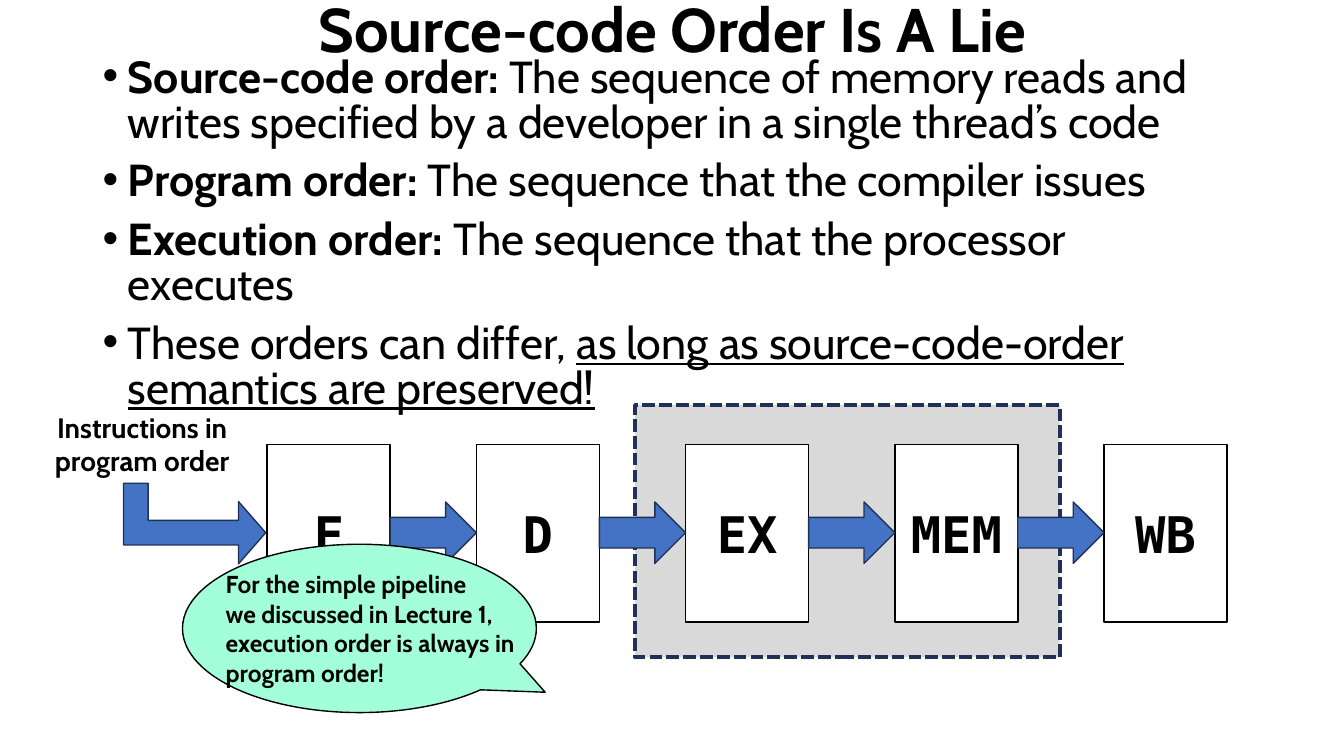
from lxml.etree import SubElement
from pptx import Presentation
from pptx.dml.color import RGBColor
from pptx.enum.dml import MSO_LINE
from pptx.enum.shapes import MSO_SHAPE
from pptx.enum.text import MSO_ANCHOR, PP_ALIGN
from pptx.oxml.ns import qn
from pptx.util import Inches, Pt


def color(hex_value):
    """Turn a hex string into a colour."""
    return RGBColor.from_string(hex_value)


def apply(target, values):
    """Set each named attribute on the target."""
    for name, value in values.items():
        setattr(target, name, value)


class SlideBuilder:
    """Hold the style and the current slide."""

    BODY_FONT = "Cabin"
    CODE_FONT = "DejaVu Sans Mono"
    INK = "000000"
    NAVY = "1E3256"
    ARROW_BLUE = "4472C4"

    def __init__(self, slide):
        """Keep the slide to draw on."""
        self.slide = slide

    def fill_frame(self, frame, paragraphs, size, font=BODY_FONT, bullet=False,
                   anchor=MSO_ANCHOR.TOP, **layout):
        """Fill a frame with paragraphs of (text, run format) pairs."""
        apply(frame, {"word_wrap": True, "vertical_anchor": anchor})
        for index, runs in enumerate(paragraphs):
            paragraph = frame.add_paragraph() if index else frame.paragraphs[0]
            if bullet:
                self.bullet(paragraph)
            apply(paragraph, layout)
            if index == 0:
                paragraph.space_before = Pt(0)
            for text, run_format in runs:
                run = paragraph.add_run()
                run.text = text
                apply(run.font, {"name": font, "size": Pt(size), "bold": True} | run_format)
                run.font.color.rgb = color(self.INK)

    def bullet(self, paragraph):
        """Give a paragraph a hanging bullet."""
        properties = paragraph._p.get_or_add_pPr()
        properties.set("marL", str(Inches(0.25)))
        properties.set("indent", str(-Inches(0.25)))
        SubElement(properties, qn("a:buFont"), typeface="Arial")
        SubElement(properties, qn("a:buChar"), char="•")

    def text(self, place, paragraphs, size, **options):
        """Add a text box."""
        box = self.slide.shapes.add_textbox(*map(Inches, place))
        self.fill_frame(box.text_frame, paragraphs, size, **options)

    def shape(self, kind, place, fill, line=INK, line_format=None, adjustments=(), rotation=0):
        """Add a filled and outlined preset shape."""
        shape = self.slide.shapes.add_shape(kind, *map(Inches, place))
        shape.shadow.inherit = False
        shape.rotation = rotation
        shape.fill.solid()
        shape.fill.fore_color.rgb = color(fill)
        shape.line.color.rgb = color(line)
        apply(shape.line, {"width": Pt(1)} | (line_format or {}))
        for index, value in enumerate(adjustments):
            shape.adjustments[index] = value
        return shape

    def stage(self, place, label):
        """Add a labelled pipeline stage."""
        box = self.shape(MSO_SHAPE.RECTANGLE, place, "FFFFFF")
        self.fill_frame(box.text_frame, [[(label, {})]], 36, font=self.CODE_FONT,
                        anchor=MSO_ANCHOR.MIDDLE, alignment=PP_ALIGN.CENTER)

    def arrow(self, kind, place, **options):
        """Add a blue block arrow."""
        self.shape(kind, place, self.ARROW_BLUE, self.NAVY, **options)


def main():
    """Build and save the slide."""
    presentation = Presentation()
    apply(presentation, {"slide_width": Inches(13.33), "slide_height": Inches(7.5)})
    builder = SlideBuilder(presentation.slides.add_slide(presentation.slide_layouts[6]))
    plain = {"bold": False}

    builder.text((0.92, -0.11, 11.5, 0.87), [[("Source-code Order Is A Lie", {})]], 44,
                 anchor=MSO_ANCHOR.MIDDLE, alignment=PP_ALIGN.CENTER, line_spacing=0.9)
    definitions = [
        ("Source-code order:", " The sequence of memory reads and writes specified by "
                               "a developer in a single thread’s code"),
        ("Program order:", " The sequence that the compiler issues"),
        ("Execution order:", " The sequence that the processor executes"),
    ]
    points = [[(term, {}), (meaning, plain)] for term, meaning in definitions]
    points.append([("These orders can differ, ", plain),
                   ("as long as source-code-order semantics are preserved!",
                    plain | {"underline": True})])
    builder.text((0.92, 0.52, 11.5, 4.15), points, 32, bullet=True,
                 line_spacing=Pt(32), space_before=Pt(10))

    builder.shape(MSO_SHAPE.RECTANGLE, (6.3, 4.02, 4.21, 2.5), "D9D9D9", builder.NAVY,
                  {"width": Pt(3), "dash_style": MSO_LINE.SQUARE_DOT})
    stages = ["F", "D", "EX", "MEM", "WB"]
    first_left, last_left, stage_width = 2.65, 10.95, 1.22
    pitch = (last_left - first_left) / (len(stages) - 1)
    for index, label in enumerate(stages):
        left = first_left + index * pitch
        builder.stage((left, 4.41, stage_width, 1.76), label)
        if index:
            gap = pitch - stage_width
            builder.arrow(MSO_SHAPE.RIGHT_ARROW, (left - gap, 4.98, gap, 0.61))

    builder.text((0.32, 4.02, 2.18, 0.77), [[("Instructions in program order", {})]], 20,
                 alignment=PP_ALIGN.CENTER)
    builder.arrow(MSO_SHAPE.BENT_UP_ARROW, (1.53, 4.49, 0.8, 1.41),
                  adjustments=(0.305, 0.387, 0.338), rotation=90)

    builder.shape(MSO_SHAPE.OVAL_CALLOUT, (1.81, 5.4, 3.51, 1.67), "A3FFDA",
                  adjustments=(0.525, 0.379))
    builder.text((2.14, 5.6, 3.27, 1.31),
                 [[("For the simple pipeline", {})],
                  [("we discussed in Lecture 1, execution order is always in program order!", {})]],
                 17.5)
    presentation.save("out.pptx")


if __name__ == "__main__":
    main()
